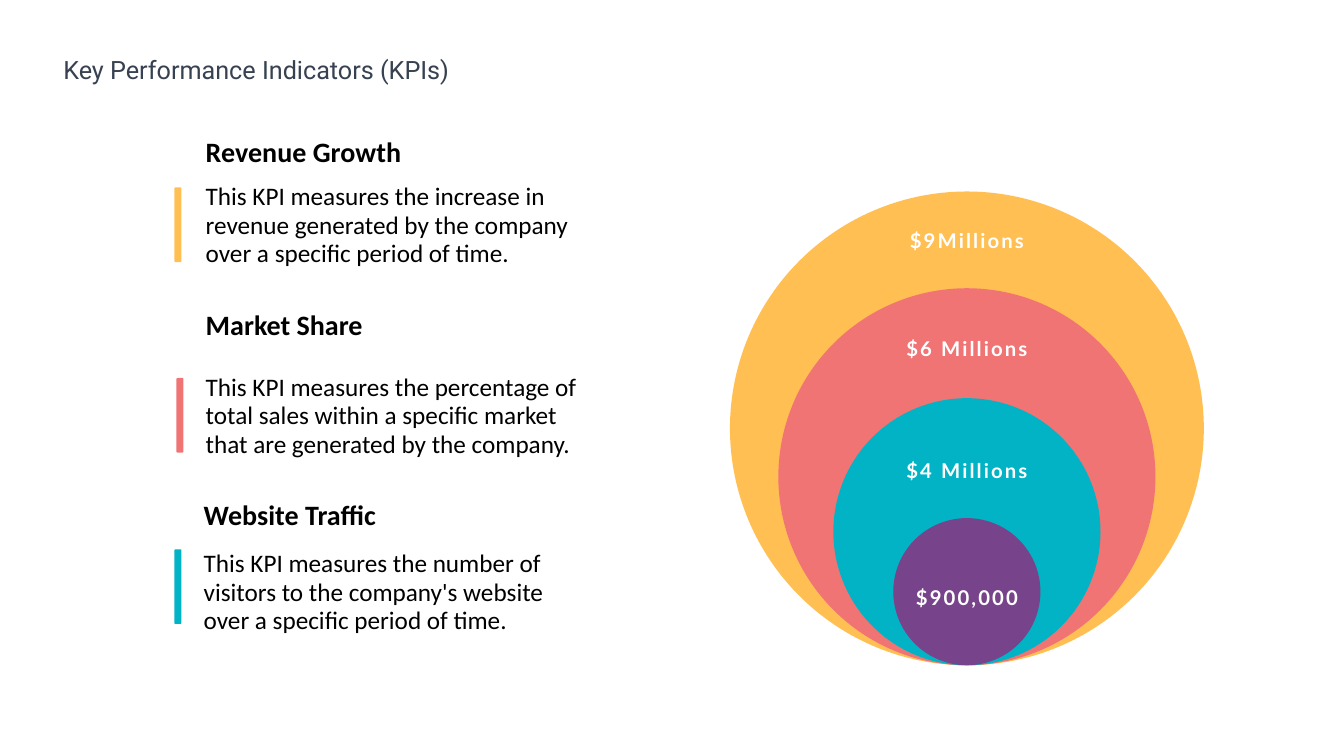
from pptx import Presentation
from pptx.dml.color import RGBColor
from pptx.enum.shapes import MSO_SHAPE as Shape
from pptx.enum.text import PP_ALIGN as Align
from pptx.util import Inches, Pt

TITLE = "Key Performance Indicators (KPIs)"
GOLD, CORAL, TEAL, PLUM = "FFBF53", "F17475", "01B3C5", "77448C"

# heading, body, colour, text left, heading top, body top, bar left, bar top
KPIS = [
    ("Revenue Growth",
     "This KPI measures the increase in revenue generated by the company "
     "over a specific period of time.",
     GOLD, 2.04, 1.43, 1.81, 1.73, 1.86),
    ("Market Share",
     "This KPI measures the percentage of total sales within a specific "
     "market that are generated by the company.",
     CORAL, 2.04, 3.14, 3.7, 1.75, 3.75),
    ("Website Traffic",
     "This KPI measures the number of visitors to the company's website "
     "over a specific period of time.",
     TEAL, 2.02, 5.03, 5.45, 1.73, 5.45),
]

# label, colour, diameter, label top
RINGS = [
    ("$9Millions", GOLD, 4.7, 2.25),
    ("$6 Millions", CORAL, 3.74, 3.32),
    ("$4 Millions", TEAL, 2.65, 4.53),
    ("$900,000", PLUM, 1.46, 5.79),
]
MID, BASE = 9.59, 6.6  # shared centre line and lowest point of the rings
LABEL_W = 1.4

prs = Presentation()
prs.slide_width, prs.slide_height = Inches(13.33), Inches(7.5)
slide = prs.slides.add_slide(prs.slide_layouts[6])


def rgb(code):
    return RGBColor.from_string(code)


def add_form(kind, box, color):
    form = slide.shapes.add_shape(kind, *map(Inches, box))
    form.shadow.inherit = False
    form.fill.solid()
    form.fill.fore_color.rgb = rgb(color)
    form.line.fill.background()


def add_text(text, box, size, face="Calibri", color="000000", bold=False,
             lead=None, inset=0):
    """Add a one-paragraph text box and return its paragraph."""
    frame = slide.shapes.add_textbox(*map(Inches, box)).text_frame
    frame.word_wrap = True
    if inset is not None:
        frame.margin_left = frame.margin_right = Inches(inset)
        frame.margin_top = frame.margin_bottom = Inches(inset)
    para = frame.paragraphs[0]
    para.text = text
    if lead:
        para.line_spacing = Pt(lead)
    font = para.font
    font.name, font.size, font.bold = face, Pt(size), bold
    font.color.rgb = rgb(color)
    return para


add_text(TITLE, (0.53, 0.49, 6.83, 0.4), 18, "Roboto", "374151", inset=None)

for head, body, color, left, head_y, body_y, bar_x, bar_y in KPIS:
    add_text(head, (left, head_y, 3.22, 0.25), 20, bold=True, lead=17.3)
    add_form(Shape.ROUNDED_RECTANGLE, (bar_x, bar_y, 0.07, 0.74), color)
    add_text(body, (left, body_y, 3.85, 0.84), 18, lead=20.3)

for label, color, size, label_y in RINGS:
    add_form(Shape.OVAL, (MID - size / 2, BASE - size, size, size), color)
    para = add_text(label, (MID - LABEL_W / 2, label_y, LABEL_W, 0.24), 14.5,
                    "Lato", "FFFFFF", bold=True, lead=18.7)
    para.alignment = Align.CENTER
    para.runs[0].font._element.set("spc", "150")

prs.save("out.pptx")
